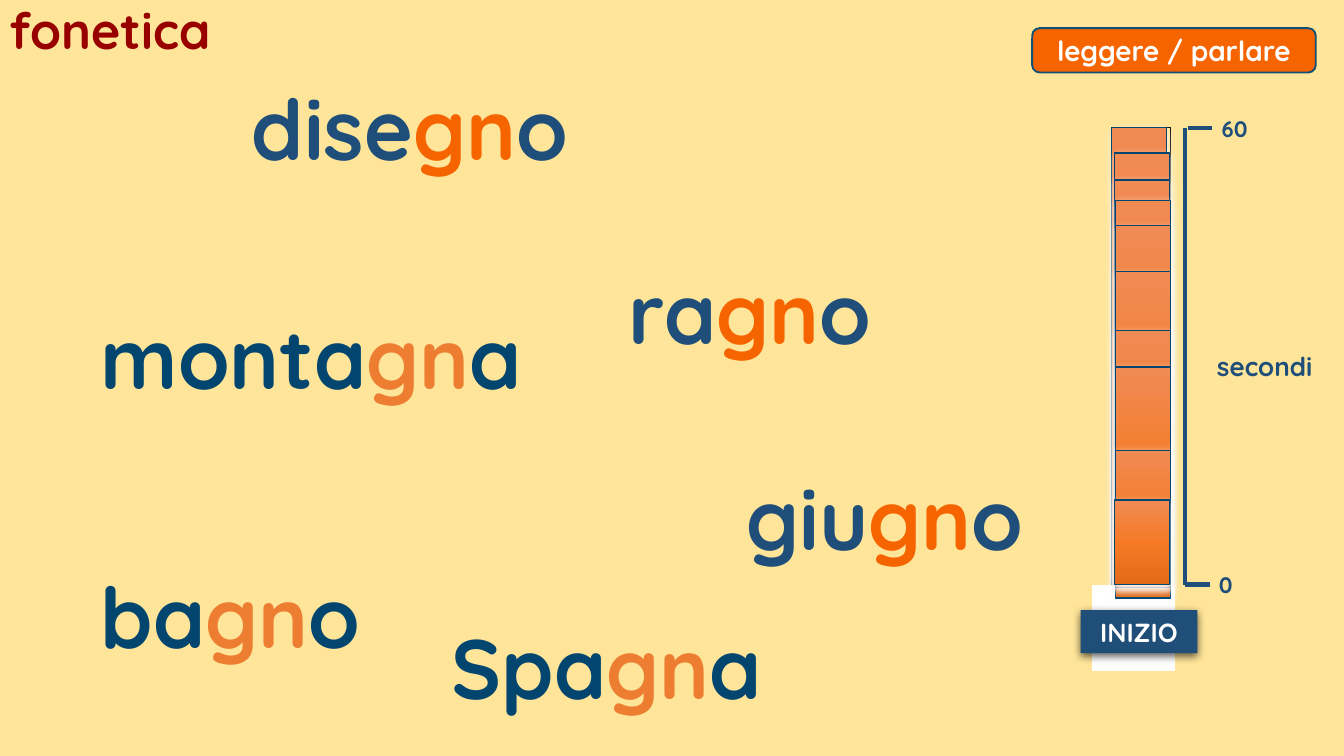
"""Build the Italian phonetics slide on the "gn" sound, with a sixty-second timer."""
from copy import deepcopy
from typing import NamedTuple, Optional

from lxml.etree import SubElement
from pptx import Presentation
from pptx.dml.color import RGBColor
from pptx.enum.shapes import MSO_CONNECTOR, MSO_SHAPE
from pptx.enum.text import MSO_ANCHOR, PP_ALIGN
from pptx.oxml.ns import qn
from pptx.util import Inches, Pt

FONT = "Quicksand"
NAVY, DEEP_BLUE, BUTTON_BLUE = "1E4E79", "02456F", "1F4E79"
ORANGE, SOFT_ORANGE = "F66400", "ED7D31"
WHITE, BLACK, RED, CREAM = "FFFFFF", "000000", "980000", "FEE599"
BAR_GRADIENT = ("F08B54", "F67A26", "E36A18")
BAR_WIDTH = 0.41


class Box(NamedTuple):
    left: float
    top: float
    width: float
    height: float


class Word(NamedTuple):
    start: str
    end: str
    box: Box
    base: str
    accent: str
    align: PP_ALIGN = PP_ALIGN.LEFT


class Label(NamedTuple):
    text: str
    box: Box
    size: float
    align: PP_ALIGN = PP_ALIGN.LEFT


WORDS = (
    Word("monta", "a", Box(0.68, 2.23, 3.33, 0.83), DEEP_BLUE, SOFT_ORANGE),
    Word("ra", "o", Box(4.61, 1.9, 2.66, 0.83), NAVY, ORANGE),
    Word("dise", "o", Box(1.72, 0.53, 2.66, 0.83), NAVY, ORANGE, PP_ALIGN.CENTER),
    Word("ba", "o", Box(0.68, 4.16, 3.91, 0.83), DEEP_BLUE, SOFT_ORANGE),
    Word("giu", "o", Box(5.3, 3.43, 2.57, 0.83), NAVY, ORANGE, PP_ALIGN.CENTER),
)
COUNTRY = Word("Spa", "a", Box(3.29, 4.54, 3.91, 0.83), DEEP_BLUE, SOFT_ORANGE)
SCALE_LABELS = (
    Label("60", Box(9.02, 0.82, 0.35, 0.28), 12),
    Label("secondi", Box(8.82, 2.57, 1.18, 0.3), 14, PP_ALIGN.CENTER),
    Label("0", Box(9, 4.21, 0.6, 0.28), 12),
)
SCALE_LINES = (
    (8.84, 0.95, 9.02, 0.95),
    (8.82, 0.95, 8.82, 4.35),
    (8.82, 4.35, 9, 4.35),
)
FULL_BAR = Box(8.27, 0.95, BAR_WIDTH, 3.41)
FALLING_BARS = tuple(Box(left, top, BAR_WIDTH, height) for left, top, height in (
    (8.29, 1.14, 3.17), (8.29, 1.34, 2.95), (8.3, 1.49, 2.95),
    (8.3, 1.68, 2.75), (8.3, 2.02, 2.43), (8.3, 2.46, 1.91),
    (8.3, 2.73, 1.62), (8.3, 3.35, 0.99), (8.29, 3.72, 0.63),
))


def color(code: str) -> RGBColor:
    """Turn a hex string into a colour."""
    return RGBColor.from_string(code)


def inches(box: Box) -> tuple:
    """Turn a box into lengths."""
    return tuple(Inches(value) for value in box)


def style_text(frame, size: float, code: Optional[str], align: PP_ALIGN,
               anchor: MSO_ANCHOR = MSO_ANCHOR.TOP):
    """Format the frame's only paragraph and return it."""
    frame.word_wrap = True
    frame.vertical_anchor = anchor
    frame.margin_left = frame.margin_right = Inches(0.07)
    frame.margin_top = frame.margin_bottom = Inches(0.04)
    paragraph = frame.paragraphs[0]
    paragraph.alignment = align
    paragraph.font.name = FONT
    paragraph.font.size = Pt(size)
    paragraph.font.bold = True
    if code:
        paragraph.font.color.rgb = color(code)
    return paragraph


def add_label(slide, label: Label) -> None:
    """Add one label of the time scale."""
    frame = slide.shapes.add_textbox(*inches(label.box)).text_frame
    frame.text = label.text
    style_text(frame, label.size, NAVY, label.align)


def add_word(slide, word: Word) -> None:
    """Add a word with its "gn" highlighted."""
    frame = slide.shapes.add_textbox(*inches(word.box)).text_frame
    paragraph = style_text(frame, 45, None, word.align)
    parts = ((word.start, word.base), ("gn", word.accent), (word.end, word.base))
    for text, code in parts:
        run = paragraph.add_run()
        run.text = text
        run.font.color.rgb = color(code)


def add_block(slide, box: Box, fill: Optional[str] = None, line: Optional[str] = None,
              width: float = 1, kind: MSO_SHAPE = MSO_SHAPE.RECTANGLE):
    """Add a preset shape with a plain fill and outline."""
    block = slide.shapes.add_shape(kind, *inches(box))
    if fill:
        block.fill.solid()
        block.fill.fore_color.rgb = color(fill)
    else:
        block.fill.background()
    if line:
        block.line.color.rgb = color(line)
        block.line.width = Pt(width)
    else:
        block.line.fill.background()
    block.shadow.inherit = False
    return block


def add_shadow(block, code: str) -> None:
    """Cast a soft shadow straight down."""
    effects = block._element.spPr.find(qn("a:effectLst"))
    shadow = SubElement(effects, qn("a:outerShdw"), blurRad=str(Pt(4.5)),
                        dist=str(Pt(1.5)), dir="5400000", rotWithShape="0")
    tint = SubElement(shadow, qn("a:srgbClr"), val=code)
    SubElement(tint, qn("a:alpha"), val="63000")


def add_bar(slide, box: Box) -> None:
    """Add a timer bar with a vertical orange gradient."""
    bar = add_block(slide, box, line=DEEP_BLUE, width=0.75)
    bar.fill.gradient()
    bar.fill.gradient_angle = 270
    stop_list = bar._element.spPr.find(qn("a:gradFill")).find(qn("a:gsLst"))
    stop_list.insert(1, deepcopy(stop_list[0]))
    for index, (stop, code) in enumerate(zip(bar.fill.gradient_stops, BAR_GRADIENT)):
        stop.position = index / 2
        stop.color.rgb = color(code)
    add_shadow(bar, WHITE)


def add_line(slide, ends: tuple) -> None:
    """Add one stroke of the time scale."""
    stroke = slide.shapes.add_connector(
        MSO_CONNECTOR.STRAIGHT, *(Inches(value) for value in ends))
    stroke.line.color.rgb = color(NAVY)
    stroke.line.width = Pt(2.25)
    SubElement(stroke._element.spPr, qn("a:effectLst"))


def add_title(slide) -> None:
    """Place and format the title."""
    title = slide.shapes.title
    title.left, title.top, title.width, title.height = inches(Box(0, 0.02, 1.67, 0.45))
    title.text_frame.text = "fonetica"
    paragraph = style_text(title.text_frame, 27, RED, PP_ALIGN.LEFT, MSO_ANCHOR.MIDDLE)
    paragraph.line_spacing = 0.9


def main() -> None:
    """Build and save the slide."""
    deck = Presentation()
    deck.slide_width = Inches(10)
    deck.slide_height = deck.slide_width * 9 // 16
    slide = deck.slides.add_slide(deck.slide_layouts[5])
    slide.background.fill.solid()
    slide.background.fill.fore_color.rgb = color(CREAM)
    add_title(slide)

    skill = add_block(slide, Box(7.68, 0.21, 2.11, 0.33), ORANGE, "115076",
                      kind=MSO_SHAPE.ROUNDED_RECTANGLE)
    skill.text_frame.text = "leggere / parlare"
    style_text(skill.text_frame, 15, WHITE, PP_ALIGN.CENTER, MSO_ANCHOR.MIDDLE)

    add_block(slide, Box(8.3, 0.95, BAR_WIDTH, 3.41), line=BLACK, width=0.75)
    add_bar(slide, FULL_BAR)
    for ends in SCALE_LINES:
        add_line(slide, ends)
    for label in SCALE_LABELS:
        add_label(slide, label)

    add_block(slide, Box(8.13, 4.36, 0.61, 0.63), WHITE, WHITE)
    start = add_block(slide, Box(8.04, 4.54, 0.87, 0.32), BUTTON_BLUE)
    add_shadow(start, BLACK)
    start.text_frame.text = "INIZIO"
    style_text(start.text_frame, 14, WHITE, PP_ALIGN.CENTER, MSO_ANCHOR.MIDDLE)

    for word in WORDS:
        add_word(slide, word)
    for box in FALLING_BARS:
        add_bar(slide, box)
    add_word(slide, COUNTRY)
    deck.save("out.pptx")


if __name__ == "__main__":
    main()
